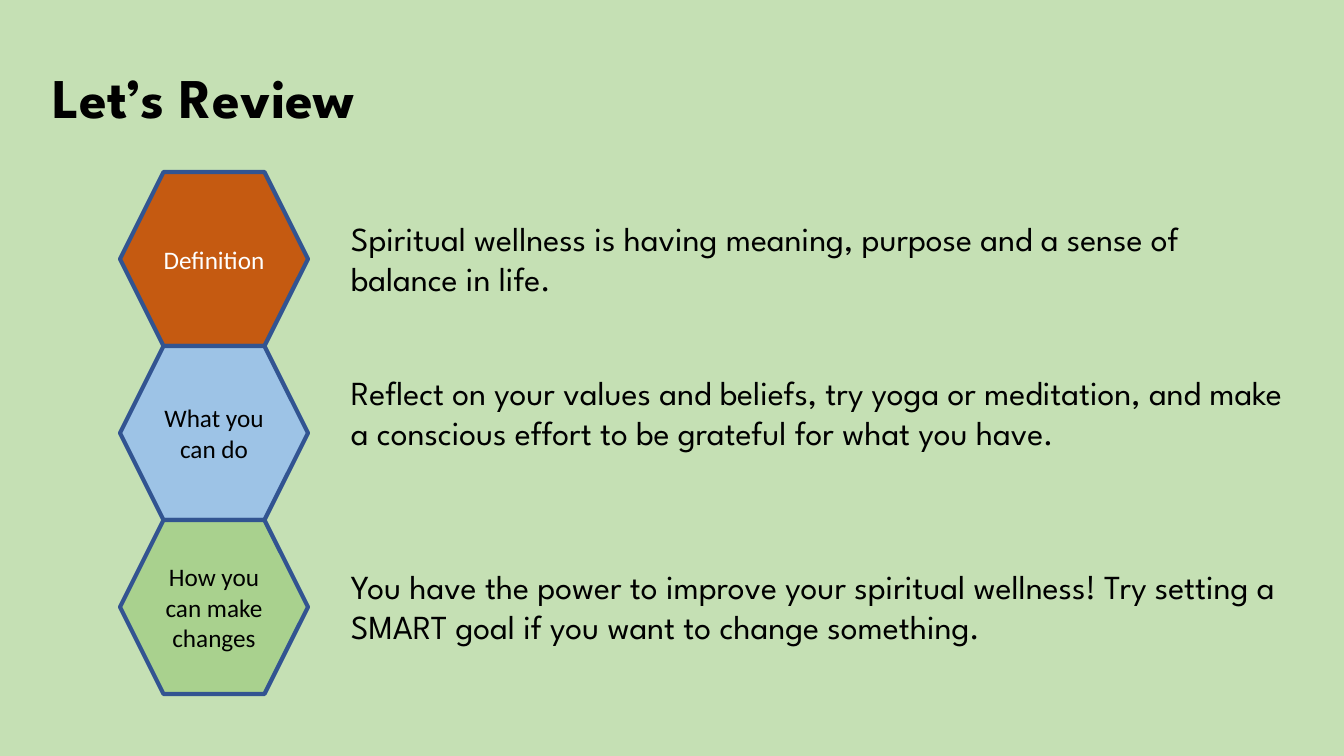
from pptx import Presentation
from pptx.dml.color import RGBColor
from pptx.enum.shapes import MSO_SHAPE
from pptx.enum.text import MSO_ANCHOR, PP_ALIGN
from pptx.util import Emu, Pt

EMU_PER_PIXEL = 914400 / 100.8
COLOURS = {
    "background": "C5E0B4",
    "outline": "325491",
    "orange": "C55A11",
    "blue": "9DC3E6",
    "green": "A9D18E",
    "black": "000000",
    "white": "FFFFFF",
}
HEADING_FONT = "League Spartan"
LABEL_FONT = "Calibri"
HEXAGON_WIDTH = 188
TEXT_OFFSET = 221
REVIEW_ROWS = [
    ("Definition", "orange", "white", 92,
     "Spiritual wellness is having meaning, purpose and a sense of balance in life."),
    ("What you can do", "blue", "black", 132,
     "Reflect on your values and beliefs, try yoga or meditation, and make "
     "a conscious effort to be grateful for what you have."),
    ("How you can make changes", "green", "black", 92,
     "You have the power to improve your spiritual wellness! Try setting a "
     "SMART goal if you want to change something."),
]


def px(length):
    """Turn pixels into EMU."""
    return Emu(round(length * EMU_PER_PIXEL))


def colour(name):
    """Look up a named colour."""
    return RGBColor.from_string(COLOURS[name])


def write_text(shape, text, font_name, size, colour_name, anchor, align, bold=False):
    """Fill a shape with one formatted paragraph."""
    frame = shape.text_frame
    frame.word_wrap = True
    frame.vertical_anchor = anchor
    frame.text = text
    para = frame.paragraphs[0]
    para.alignment = align
    para.line_spacing = 1.0
    para.font.name = font_name
    para.font.size = Pt(size)
    para.font.bold = bold
    para.font.color.rgb = colour(colour_name)


def place_title(page, left, top, width, height):
    """Put the heading in the title placeholder."""
    title = page.shapes.title
    title.left, title.top = px(left), px(top)
    title.width, title.height = px(width), px(height)
    write_text(title, "Let’s Review", HEADING_FONT, 40, "black",
               MSO_ANCHOR.TOP, PP_ALIGN.LEFT, bold=True)


def add_hexagon(page, left, top, width, height, label, fill_name, text_name):
    """Draw an outlined hexagon with its label."""
    hexagon = page.shapes.add_shape(
        MSO_SHAPE.HEXAGON, px(left), px(top), px(width), px(height))
    hexagon.shadow.inherit = False
    hexagon.fill.solid()
    hexagon.fill.fore_color.rgb = colour(fill_name)
    hexagon.line.color.rgb = colour("outline")
    hexagon.line.width = Pt(3)
    write_text(hexagon, label, LABEL_FONT, 18, text_name,
               MSO_ANCHOR.MIDDLE, PP_ALIGN.CENTER)


def add_review(page, left, top, width, height):
    """Stack the hexagons, each with its statement centred beside it."""
    row_height = height // len(REVIEW_ROWS)
    for index, (label, fill_name, text_name, text_height, statement) in enumerate(REVIEW_ROWS):
        row_top = top + index * row_height
        add_hexagon(page, left, row_top, HEXAGON_WIDTH, row_height,
                    label, fill_name, text_name)
        box = page.shapes.add_textbox(
            px(left + TEXT_OFFSET), px(row_top + (row_height - text_height) // 2),
            px(width - TEXT_OFFSET), px(text_height))
        write_text(box, statement, HEADING_FONT, 24, "black",
                   MSO_ANCHOR.TOP, PP_ALIGN.LEFT)


def main():
    """Build and save the review slide."""
    deck = Presentation()
    deck.slide_width, deck.slide_height = px(1344), px(756)
    page = deck.slides.add_slide(deck.slide_layouts[5])
    page.background.fill.solid()
    page.background.fill.fore_color.rgb = colour("background")
    place_title(page, 42, 57, 1165, 78)
    add_review(page, 120, 172, 1176, 522)
    deck.save("out.pptx")


if __name__ == "__main__":
    main()
